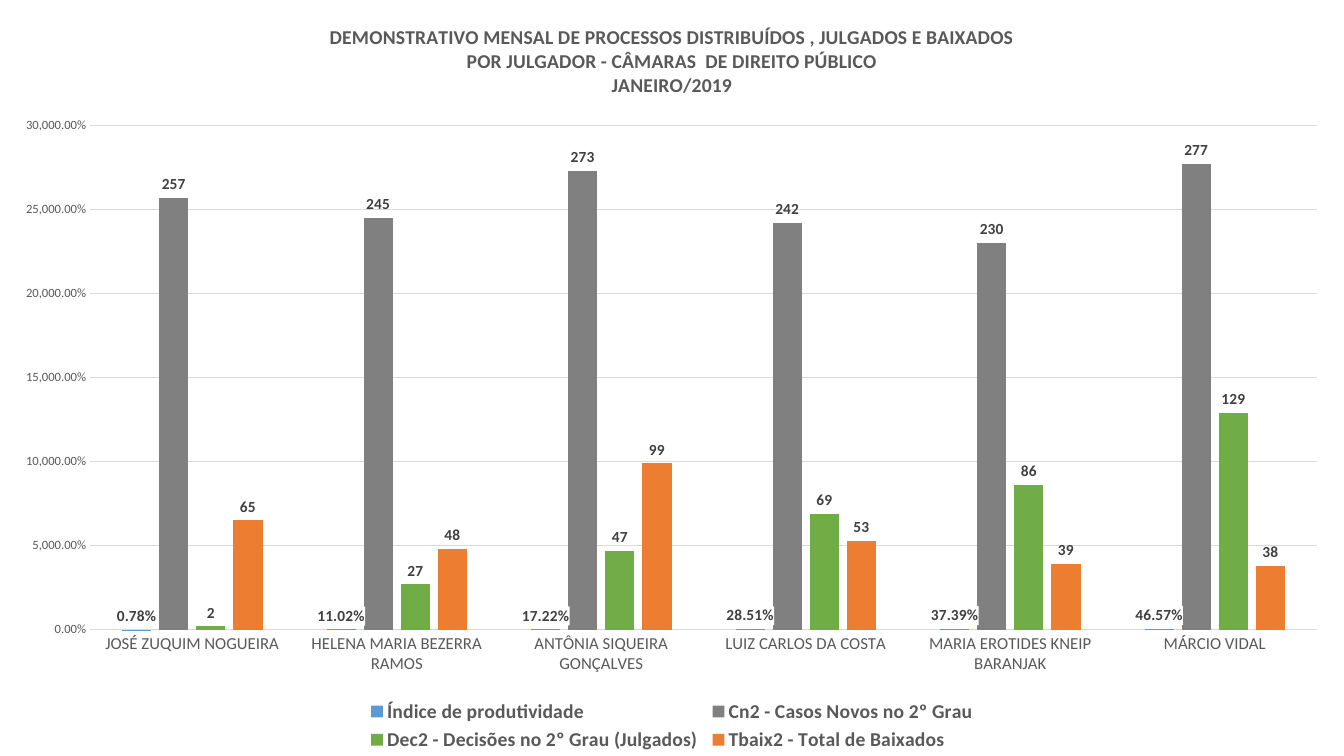
"""Builds a slide with a monthly column chart of cases per judge."""
import lxml.etree
import pptx
import pptx.chart.data
import pptx.dml.color
import pptx.enum.chart
import pptx.oxml
import pptx.oxml.ns
import pptx.util

Pt = pptx.util.Pt
enum = pptx.enum.chart
qn = pptx.oxml.ns.qn
SPACES = pptx.oxml.ns.nsdecls("c", "a")


def style(font, size, color, bold=False):
    """Set the face, size, colour and weight of a font."""
    font.name = "Calibri"
    font.size = Pt(size)
    font.bold = bold
    font.color.rgb = pptx.dml.color.RGBColor.from_string(color)


def place(parent, index, target, box):
    """Fix a chart part at x, y, width, height, as shares of the chart."""
    for old in parent.findall(qn("c:layout")):
        parent.remove(old)
    parts = "".join(f'<c:{k} val="{v}"/>' for k, v in zip("xywh", box))
    parent.insert(index, pptx.oxml.parse_xml(
        f'<c:layout {SPACES}><c:manualLayout>{target}<c:xMode val="edge"/>'
        f'<c:yMode val="edge"/>{parts}</c:manualLayout></c:layout>'))


judges = ["JOSÉ ZUQUIM NOGUEIRA", "HELENA MARIA BEZERRA RAMOS",
          "ANTÔNIA SIQUEIRA GONÇALVES", "LUIZ CARLOS DA COSTA",
          "MARIA EROTIDES KNEIP BARANJAK", "MÁRCIO VIDAL"]
series = [
    ("Índice de produtividade", "5B9BD5", "0.00%",
     [0.0078, 0.1102, 0.1722, 0.2851, 0.3739, 0.4657]),
    ("Cn2 - Casos Novos no 2º Grau", "808080", "General",
     [257, 245, 273, 242, 230, 277]),
    ("Dec2 - Decisões no 2º Grau (Julgados)", "70AD47", "General",
     [2, 27, 47, 69, 86, 129]),
    ("Tbaix2 - Total de Baixados", "ED7D31", "General",
     [65, 48, 99, 53, 39, 38]),
]
heading = ["DEMONSTRATIVO MENSAL DE PROCESSOS DISTRIBUÍDOS , JULGADOS E BAIXADOS",
           "POR JULGADOR - CÂMARAS  DE DIREITO PÚBLICO",
           "JANEIRO/2019"]

deck = pptx.Presentation()
deck.slide_width, deck.slide_height = Pt(960), Pt(540)
slide = deck.slides.add_slide(deck.slide_layouts[6])

data = pptx.chart.data.CategoryChartData()
data.categories = judges
for name, color, form, values in series:
    data.add_series(name, values, form)
chart = slide.shapes.add_chart(enum.XL_CHART_TYPE.COLUMN_CLUSTERED,
                               0, 0, Pt(960), Pt(540), data).chart
style(chart.font, 10, "000000")

chart.has_title = True
frame = chart.chart_title.text_frame
frame.text = "\n".join(heading)
for para in frame.paragraphs:
    style(para.font, 14, "595959", True)
chart.chart_title.include_in_layout = False

plot = chart.plots[0]
plot.gap_width, plot.overlap = 219, -27
plot.vary_by_categories = False
for bars, (name, color, form, values) in zip(plot.series, series):
    bars.invert_if_negative = False
    bars.format.fill.solid()
    bars.format.fill.fore_color.rgb = pptx.dml.color.RGBColor.from_string(color)
    labels = bars.data_labels
    labels.show_value = True
    labels.number_format = form
    labels.number_format_is_linked = False
    labels.position = enum.XL_LABEL_POSITION.OUTSIDE_END
    style(labels.font, 11, "404040", True)
    if form == "0.00%":
        text = bars._element.find(qn("c:dLbls")).find(qn("c:txPr"))
        text.addprevious(pptx.oxml.parse_xml(
            f'<c:spPr {SPACES}><a:solidFill><a:srgbClr val="FFFFFF"/>'
            '</a:solidFill></c:spPr>'))

judge, scale = chart.category_axis, chart.value_axis
for axis, size in ((judge, 12), (scale, 9)):
    axis.major_tick_mark = axis.minor_tick_mark = enum.XL_TICK_MARK.NONE
    style(axis.tick_labels.font, size, "595959")
scale.minimum_scale, scale.maximum_scale, scale.major_unit = 0, 300, 50
scale.tick_labels.number_format = "#,##0.00%"
scale.tick_labels.number_format_is_linked = False
scale.format.line.fill.background()
for line in (judge.format.line, scale.major_gridlines.format.line):
    line.width = Pt(0.75)
    line.color.rgb = pptx.dml.color.RGBColor.from_string("D9D9D9")

chart.has_legend = True
legend = chart.legend
legend.position = enum.XL_LEGEND_POSITION.BOTTOM
legend.include_in_layout = False
style(legend.font, 14, "595959", True)

area = chart._chartSpace.chart.plotArea
place(area, 0, '<c:layoutTarget val="inner"/>', (0.067, 0.166, 0.913, 0.667))
place(legend._element, 1, "", (0.27, 0.92, 0.46, 0.08))

deck.save("out.pptx")
